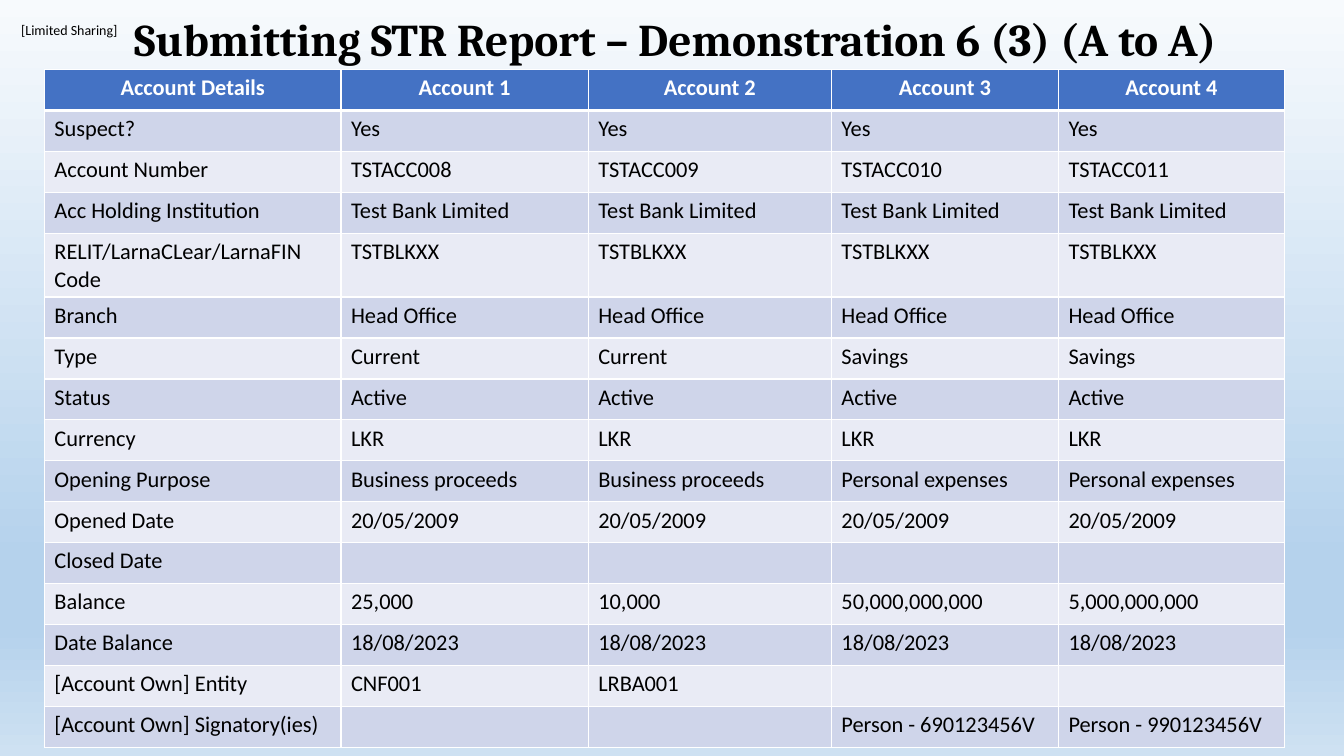
import lxml.etree
import pptx
import pptx.dml.color
import pptx.enum.text
import pptx.oxml
import pptx.oxml.ns
import pptx.util

Inches = pptx.util.Inches
Pt = pptx.util.Pt
RGBColor = pptx.dml.color.RGBColor
qn = pptx.oxml.ns.qn

BLACK = RGBColor(0x00, 0x00, 0x00)
WHITE = RGBColor(0xFF, 0xFF, 0xFF)
HEADER_BLUE = RGBColor(0x44, 0x72, 0xC4)
BAND_DARK = RGBColor(0xCF, 0xD5, 0xEA)
BAND_LIGHT = RGBColor(0xE9, 0xEB, 0xF5)
SKY_TOP = RGBColor(0xF7, 0xFA, 0xFD)
SKY_MIDDLE = RGBColor(0xB5, 0xD2, 0xEC)
SKY_BOTTOM = RGBColor(0xCE, 0xE1, 0xF2)
SKY_STOPS = [(0, SKY_TOP), (74, SKY_MIDDLE), (83, SKY_MIDDLE), (100, SKY_BOTTOM)]

COLUMN_WIDTHS = [2.94, 2.45, 2.41, 2.25, 2.24]
CODE_ROW = 4
CODE_ROW_HEIGHT = 0.63
ACCOUNT_ROWS = [
    ["Account Details", "Account 1", "Account 2", "Account 3", "Account 4"],
    ["Suspect?"] + ["Yes"] * 4,
    ["Account Number", "TSTACC008", "TSTACC009", "TSTACC010", "TSTACC011"],
    ["Acc Holding Institution"] + ["Test Bank Limited"] * 4,
    ["RELIT/LarnaCLear/LarnaFIN Code"] + ["TSTBLKXX"] * 4,
    ["Branch"] + ["Head Office"] * 4,
    ["Type", "Current", "Current", "Savings", "Savings"],
    ["Status"] + ["Active"] * 4,
    ["Currency"] + ["LKR"] * 4,
    ["Opening Purpose"] + ["Business proceeds"] * 2 + ["Personal expenses"] * 2,
    ["Opened Date"] + ["20/05/2009"] * 4,
    ["Closed Date"] + [""] * 4,
    ["Balance", "25,000", "10,000", "50,000,000,000", "5,000,000,000"],
    ["Date Balance"] + ["18/08/2023"] * 4,
    ["[Account Own] Entity", "CNF001", "LRBA001", "", ""],
    ["[Account Own] Signatory(ies)", "", "", "Person - 690123456V", "Person - 990123456V"],
]


def style_paragraph(para, font_name, size, color, bold=False):
    para.font.name = font_name
    para.font.size = Pt(size)
    para.font.color.rgb = color
    para.font.bold = bold


def paint_background(page):
    fill = page.background.fill
    fill.gradient()
    gradient = page.background._cSld.find(".//" + qn("a:gradFill"))
    for child in list(gradient):
        gradient.remove(child)
    stops = lxml.etree.SubElement(gradient, qn("a:gsLst"))
    for percent, color in SKY_STOPS:
        stop = lxml.etree.SubElement(stops, qn("a:gs"), pos=str(percent * 1000))
        lxml.etree.SubElement(stop, qn("a:srgbClr"), val=str(color))
    lxml.etree.SubElement(gradient, qn("a:lin"), ang="5400000", scaled="0")


def add_sharing_label(page, left, top, width, height):
    box = page.shapes.add_textbox(Inches(left), Inches(top), Inches(width), Inches(height))
    frame = box.text_frame
    frame.margin_left = frame.margin_right = frame.margin_top = frame.margin_bottom = 0
    frame.word_wrap = True
    para = frame.paragraphs[0]
    para.text = "[Limited Sharing]"
    style_paragraph(para, "Calibri", 10, BLACK)


def place_title(page, left, top, width, height):
    title = page.shapes.title
    title.left, title.top = Inches(left), Inches(top)
    title.width, title.height = Inches(width), Inches(height)
    frame = title.text_frame
    frame.auto_size = pptx.enum.text.MSO_AUTO_SIZE.NONE
    frame.vertical_anchor = pptx.enum.text.MSO_ANCHOR.MIDDLE
    para = frame.paragraphs[0]
    para.text = "Submitting STR Report – Demonstration 6 (3) (A to A)"
    para.alignment = pptx.enum.text.PP_ALIGN.LEFT
    para.line_spacing = 0.9
    style_paragraph(para, "Cambria", 32.4, BLACK, True)


def add_borders(cell, top_points, bottom_points):
    properties = cell._tc.get_or_add_tcPr()
    edges = {"a:lnL": 1, "a:lnR": 1, "a:lnT": top_points, "a:lnB": bottom_points}
    for tag, points in edges.items():
        line = lxml.etree.SubElement(properties, qn(tag), w=str(Pt(points)))
        paint = lxml.etree.SubElement(line, qn("a:solidFill"))
        lxml.etree.SubElement(paint, qn("a:srgbClr"), val=str(WHITE))


def fill_cell(cell, text, row_index):
    is_header = row_index == 0
    add_borders(cell, 3 if row_index == 1 else 1, 3 if is_header else 1)
    cell.fill.solid()
    band = BAND_DARK if row_index % 2 else BAND_LIGHT
    cell.fill.fore_color.rgb = HEADER_BLUE if is_header else band
    para = cell.text_frame.paragraphs[0]
    para.text = text
    align = pptx.enum.text.PP_ALIGN
    para.alignment = align.CENTER if is_header else align.LEFT
    style_paragraph(para, "Calibri", 16, WHITE if is_header else BLACK, is_header)


def add_account_table(page, left, top, width, height):
    row_count = len(ACCOUNT_ROWS)
    table = page.shapes.add_table(
        row_count, len(COLUMN_WIDTHS),
        Inches(left), Inches(top), Inches(width), Inches(height),
    ).table
    for column, share in zip(table.columns, COLUMN_WIDTHS):
        column.width = Inches(width * share / sum(COLUMN_WIDTHS))
    plain_height = (height - CODE_ROW_HEIGHT) / (row_count - 1)
    for row_index, texts in enumerate(ACCOUNT_ROWS):
        row_height = CODE_ROW_HEIGHT if row_index == CODE_ROW else plain_height
        table.rows[row_index].height = Inches(row_height)
        for column_index, text in enumerate(texts):
            fill_cell(table.cell(row_index, column_index), text, row_index)


def main():
    deck = pptx.Presentation()
    deck.slide_width = Inches(13.33)
    deck.slide_height = Inches(7.5)
    page = deck.slides.add_slide(deck.slide_layouts[5])
    paint_background(page)
    add_sharing_label(page, 0.21, 0.21, 0.99, 0.17)
    add_account_table(page, 0.44, 0.69, 12.3, 6.72)
    place_title(page, 1.23, -0.02, 11.98, 0.87)
    deck.save("out.pptx")


if __name__ == "__main__":
    main()
